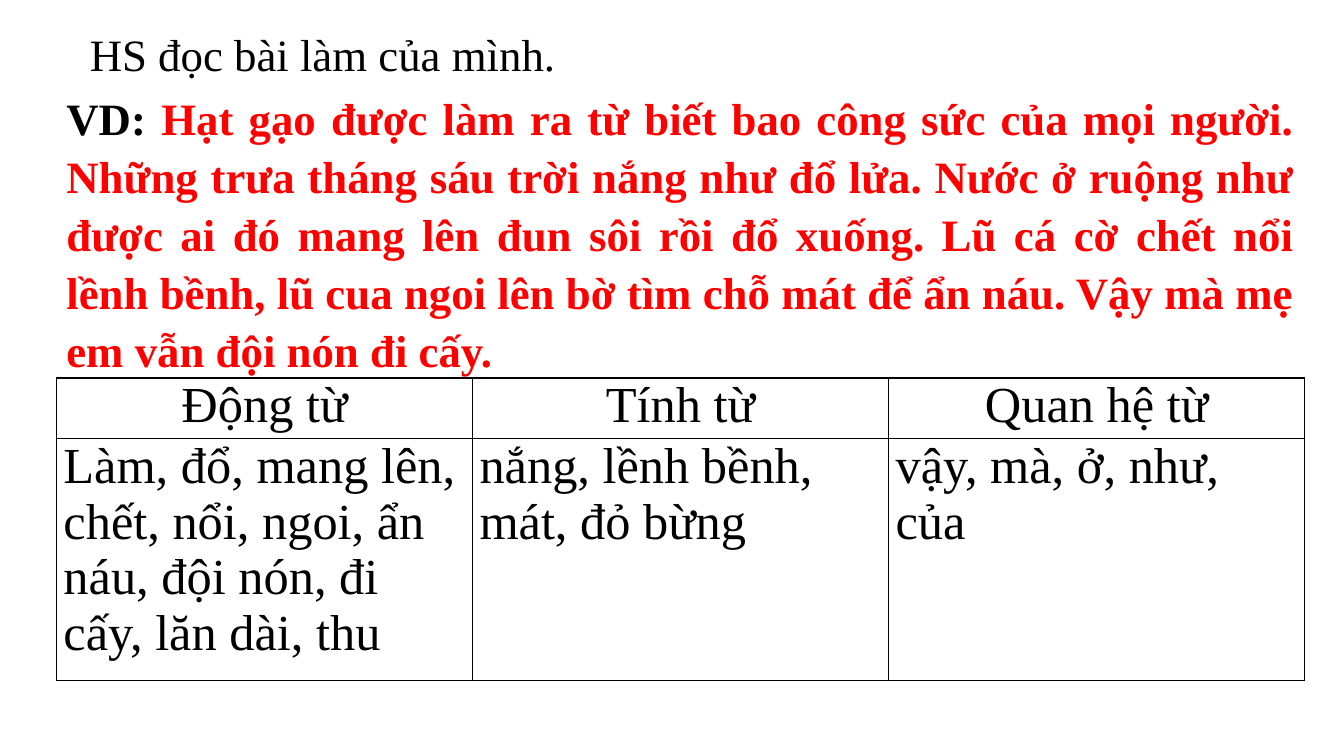
from dataclasses import dataclass

from lxml.etree import SubElement
from pptx import Presentation
from pptx.dml.color import RGBColor
from pptx.enum.text import MSO_ANCHOR, MSO_AUTO_SIZE, PP_ALIGN
from pptx.oxml.ns import qn
from pptx.util import Inches, Pt


@dataclass(frozen=True)
class Theme:
    """Hold the colours, font and type sizes of the slide."""

    font: str = "Times New Roman"
    ink: str = "000000"
    accent: str = "FF0000"
    text_size: int = 32
    table_size: int = 36
    border_width: int = 1
    line_spacing: float = 1.08


THEME = Theme()

TITLE = "HS đọc bài làm của mình."
EXAMPLE_LABEL = "VD: "
EXAMPLE = (
    "Hạt gạo được làm ra từ biết bao công sức của mọi người. "
    "Những trưa tháng sáu trời nắng như đổ lửa. "
    "Nước ở ruộng như được ai đó mang lên đun sôi rồi đổ xuống. "
    "Lũ cá cờ chết nổi lềnh bềnh, lũ cua ngoi lên bờ tìm chỗ mát để ẩn náu. "
    "Vậy mà mẹ em vẫn đội nón đi cấy."
)
WORD_CLASSES = (
    ("Động từ", "Tính từ", "Quan hệ từ"),
    (
        "Làm, đổ, mang lên, chết, nổi, ngoi, ẩn náu, đội nón, đi cấy, lăn dài, thu",
        "nắng, lềnh bềnh, mát, đỏ bừng",
        "vậy, mà, ở, như, của",
    ),
)
ROW_HEIGHTS = (0.6, 2.4)
CONTENT_LEFT, CONTENT_WIDTH = 0.56, 12.38


def add_run(paragraph, text, size, color=THEME.ink, bold=False):
    """Append one formatted run to a paragraph."""
    run = paragraph.add_run()
    run.text = text
    run.font.name = THEME.font
    run.font.size = Pt(size)
    run.font.bold = bold
    run.font.color.rgb = RGBColor.from_string(color)


def fill_title(slide):
    """Move the title placeholder into place and write the heading."""
    title = slide.shapes.title
    title.left, title.top = Inches(0.79), Inches(0.17)
    title.width, title.height = Inches(4.87), Inches(0.64)
    frame = title.text_frame
    frame.word_wrap = False
    frame.auto_size = MSO_AUTO_SIZE.SHAPE_TO_FIT_TEXT
    frame.vertical_anchor = MSO_ANCHOR.TOP
    paragraph = frame.paragraphs[0]
    paragraph.alignment = PP_ALIGN.LEFT
    paragraph.line_spacing = THEME.line_spacing
    add_run(paragraph, TITLE, THEME.text_size)


def add_example(slide):
    """Add the justified example passage with its label."""
    shape = slide.shapes.add_textbox(
        Inches(CONTENT_LEFT), Inches(0.81), Inches(CONTENT_WIDTH), Inches(2.79)
    )
    frame = shape.text_frame
    frame.word_wrap = True
    frame.auto_size = MSO_AUTO_SIZE.SHAPE_TO_FIT_TEXT
    paragraph = frame.paragraphs[0]
    paragraph.alignment = PP_ALIGN.JUSTIFY
    paragraph.line_spacing = THEME.line_spacing
    add_run(paragraph, EXAMPLE_LABEL, THEME.text_size, bold=True)
    add_run(paragraph, EXAMPLE, THEME.text_size, THEME.accent, bold=True)


def add_borders(cell):
    """Draw a solid line on all four sides of a cell."""
    properties = cell._tc.get_or_add_tcPr()
    for position, side in enumerate(("a:lnL", "a:lnR", "a:lnT", "a:lnB")):
        line = SubElement(properties, qn(side), w=str(Pt(THEME.border_width)))
        fill = SubElement(line, qn("a:solidFill"))
        SubElement(fill, qn("a:srgbClr"), val=THEME.ink)
        properties.insert(position, line)


def format_cell(cell, text, alignment):
    """Write the text of a cell and set its margins, fill and borders."""
    cell.margin_left = cell.margin_right = Inches(0.07)
    cell.margin_top = cell.margin_bottom = 0
    cell.fill.background()
    add_borders(cell)
    paragraph = cell.text_frame.paragraphs[0]
    paragraph.alignment = alignment
    add_run(paragraph, text, THEME.table_size)


def add_word_table(slide):
    """Add the table that sorts words by word class."""
    table = slide.shapes.add_table(
        len(WORD_CLASSES), len(WORD_CLASSES[0]),
        Inches(CONTENT_LEFT), Inches(3.75),
        Inches(CONTENT_WIDTH), Inches(sum(ROW_HEIGHTS)),
    ).table
    table.first_row = table.horz_banding = False
    alignments = (PP_ALIGN.CENTER, PP_ALIGN.LEFT)
    for row, height, texts, alignment in zip(
        table.rows, ROW_HEIGHTS, WORD_CLASSES, alignments
    ):
        row.height = Inches(height)
        for cell, text in zip(row.cells, texts):
            format_cell(cell, text, alignment)


def main():
    """Build the slide and save the presentation."""
    presentation = Presentation()
    presentation.slide_width = Inches(13.33)
    presentation.slide_height = Inches(7.5)
    slide = presentation.slides.add_slide(presentation.slide_layouts[5])
    fill_title(slide)
    add_example(slide)
    add_word_table(slide)
    presentation.save("out.pptx")


if __name__ == "__main__":
    main()
